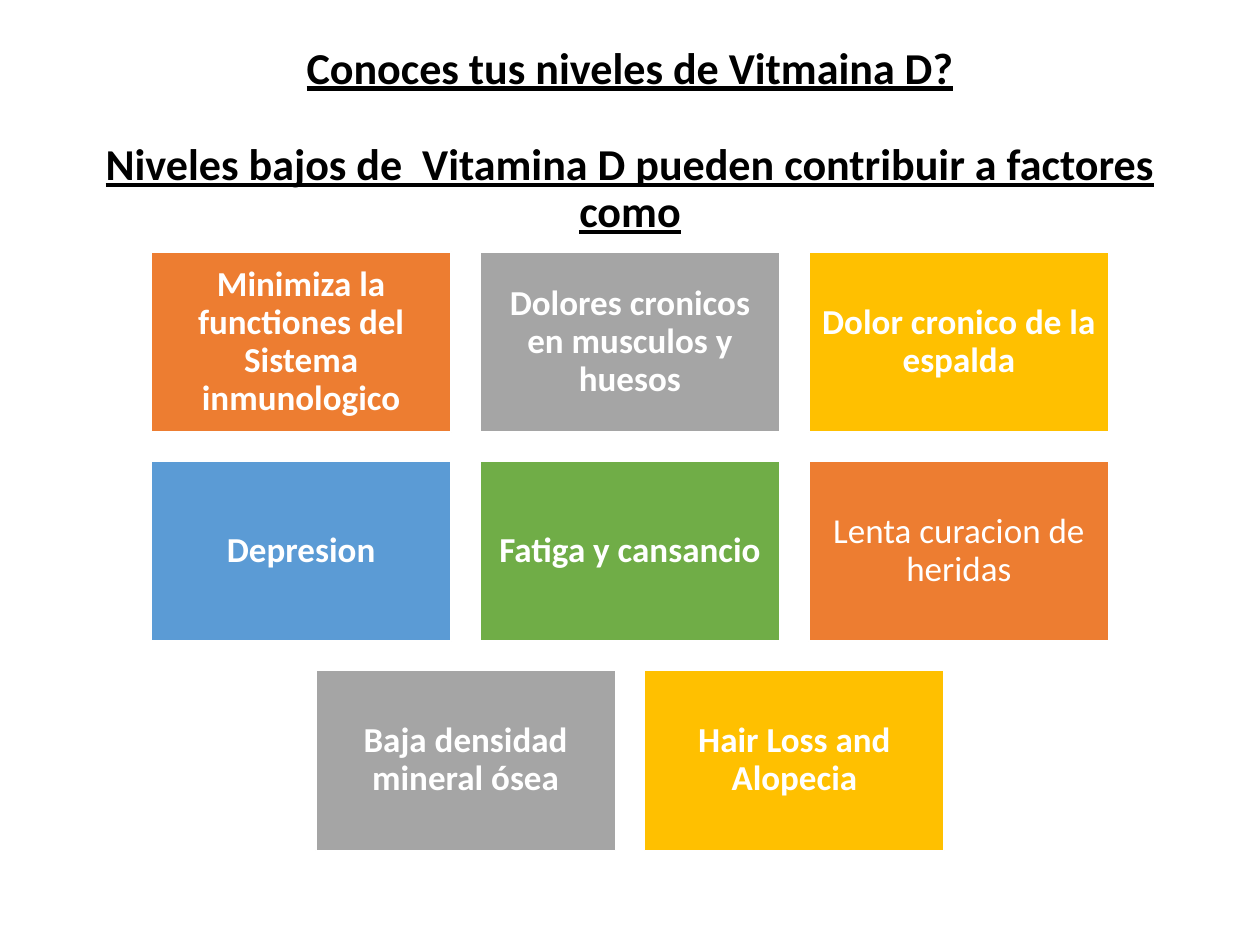
from pptx import Presentation
from pptx.dml.color import RGBColor
from pptx.enum.shapes import MSO_SHAPE
from pptx.enum.text import MSO_ANCHOR, PP_ALIGN
from pptx.util import Inches, Pt

RECTANGLE = MSO_SHAPE.RECTANGLE
MIDDLE = MSO_ANCHOR.MIDDLE
CENTER = PP_ALIGN.CENTER

SLIDE_WIDTH, SLIDE_HEIGHT = 10, 7.5
CARD_WIDTH, CARD_HEIGHT, GAP = 2.38, 1.43, 0.23
GRID_TOP = 2

ORANGE, GRAY, YELLOW = "ED7D31", "A5A5A5", "FFC000"
BLUE, GREEN = "5B9BD5", "70AD47"
BLACK, WHITE = "000000", "FFFFFF"

TITLE_LINES = [
    "Conoces tus niveles de Vitmaina D?",
    "Niveles bajos de  Vitamina D pueden contribuir a factores como",
]

# Rows of cards: text, fill colour, bold
CARD_ROWS = [
    [("Minimiza la functiones del Sistema inmunologico", ORANGE, True),
     ("Dolores cronicos en musculos y huesos", GRAY, True),
     ("Dolor cronico de la espalda", YELLOW, True)],
    [("Depresion", BLUE, True),
     ("Fatiga y cansancio", GREEN, True),
     ("Lenta curacion de heridas", ORANGE, False)],
    [("Baja densidad mineral ósea", GRAY, True),
     ("Hair Loss and Alopecia", YELLOW, True)],
]


def color(hex_string):
    return RGBColor.from_string(hex_string)


class SlideBuilder:
    font_name = "Calibri"
    line_spacing = 0.9

    def __init__(self, slide):
        self.slide = slide

    def style_paragraph(self, paragraph, size, hex_string, bold):
        paragraph.alignment = CENTER
        paragraph.line_spacing = self.line_spacing
        font = paragraph.font
        font.name = self.font_name
        font.size = Pt(size)
        font.bold = bold
        font.color.rgb = color(hex_string)

    def title(self, lines, left, top, width, height):
        box = self.slide.shapes.add_textbox(
            Inches(left), Inches(top), Inches(width), Inches(height))
        frame = box.text_frame
        frame.word_wrap = True
        frame.vertical_anchor = MIDDLE
        frame.text = "\n".join(lines)
        for index, paragraph in enumerate(frame.paragraphs):
            self.style_paragraph(paragraph, 25.2, BLACK, True)
            paragraph.font.underline = True
            if index:
                paragraph.space_before = Pt(27.7)

    def card(self, text, fill, bold, left, top):
        shape = self.slide.shapes.add_shape(
            RECTANGLE, Inches(left), Inches(top),
            Inches(CARD_WIDTH), Inches(CARD_HEIGHT))
        shape.shadow.inherit = False
        shape.fill.solid()
        shape.fill.fore_color.rgb = color(fill)
        shape.line.color.rgb = color(WHITE)
        shape.line.width = Pt(1)
        frame = shape.text_frame
        frame.word_wrap = True
        frame.vertical_anchor = MIDDLE
        frame.margin_left = frame.margin_right = Inches(0.08)
        frame.margin_top = frame.margin_bottom = Inches(0.08)
        frame.text = text
        self.style_paragraph(frame.paragraphs[0], 20, WHITE, bold)


def main():
    presentation = Presentation()
    presentation.slide_width = Inches(SLIDE_WIDTH)
    presentation.slide_height = Inches(SLIDE_HEIGHT)
    slide = presentation.slides.add_slide(presentation.slide_layouts[6])
    builder = SlideBuilder(slide)

    # Title
    builder.title(TITLE_LINES, 0.69, 0.4, 8.62, 1.45)

    # Cards, each row centred on the slide
    for row_index, row in enumerate(CARD_ROWS):
        row_width = len(row) * (CARD_WIDTH + GAP) - GAP
        row_left = (SLIDE_WIDTH - row_width) / 2
        top = GRID_TOP + row_index * (CARD_HEIGHT + GAP)
        for column, (text, fill, bold) in enumerate(row):
            left = row_left + column * (CARD_WIDTH + GAP)
            builder.card(text, fill, bold, left, top)

    presentation.save("out.pptx")


if __name__ == "__main__":
    main()
